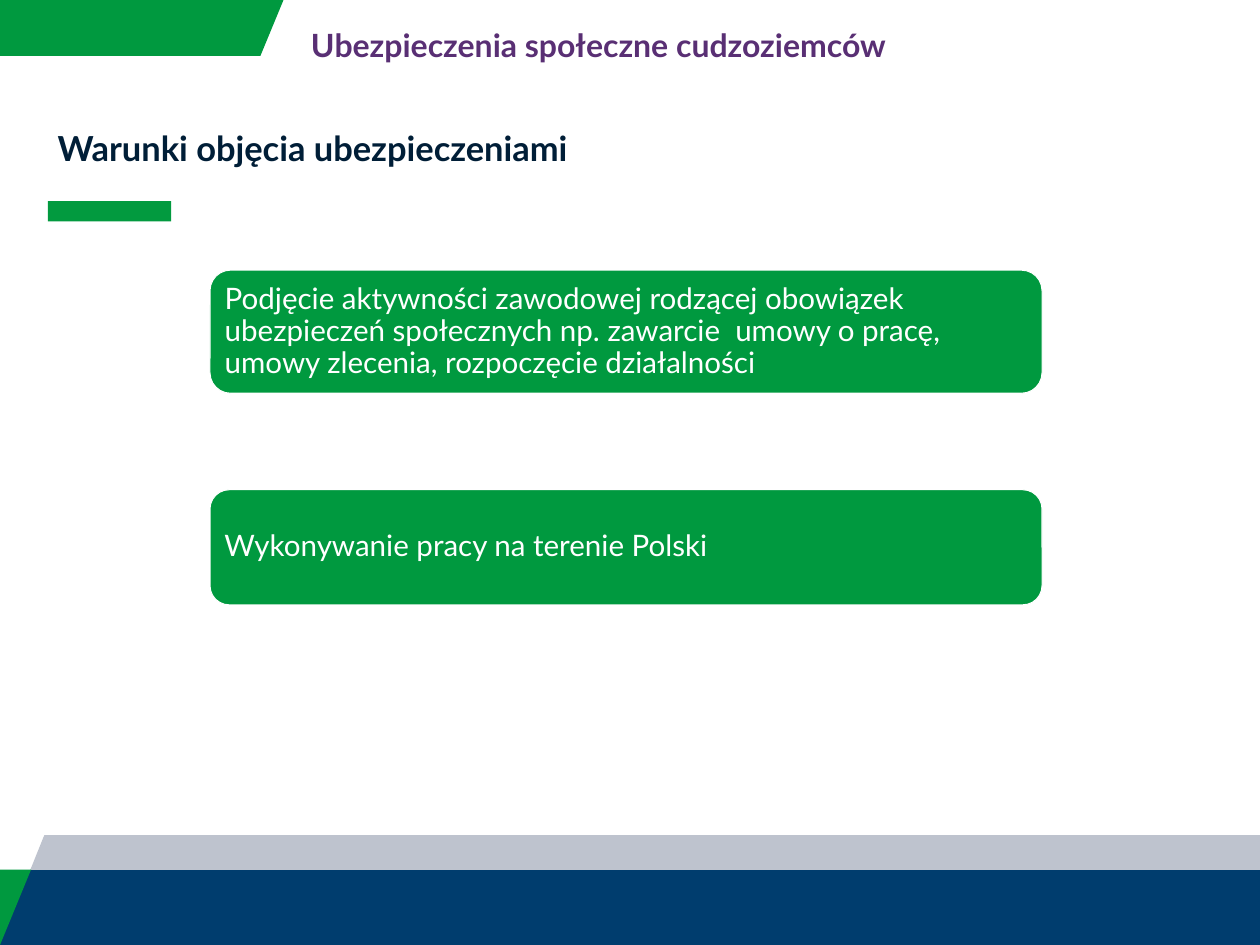
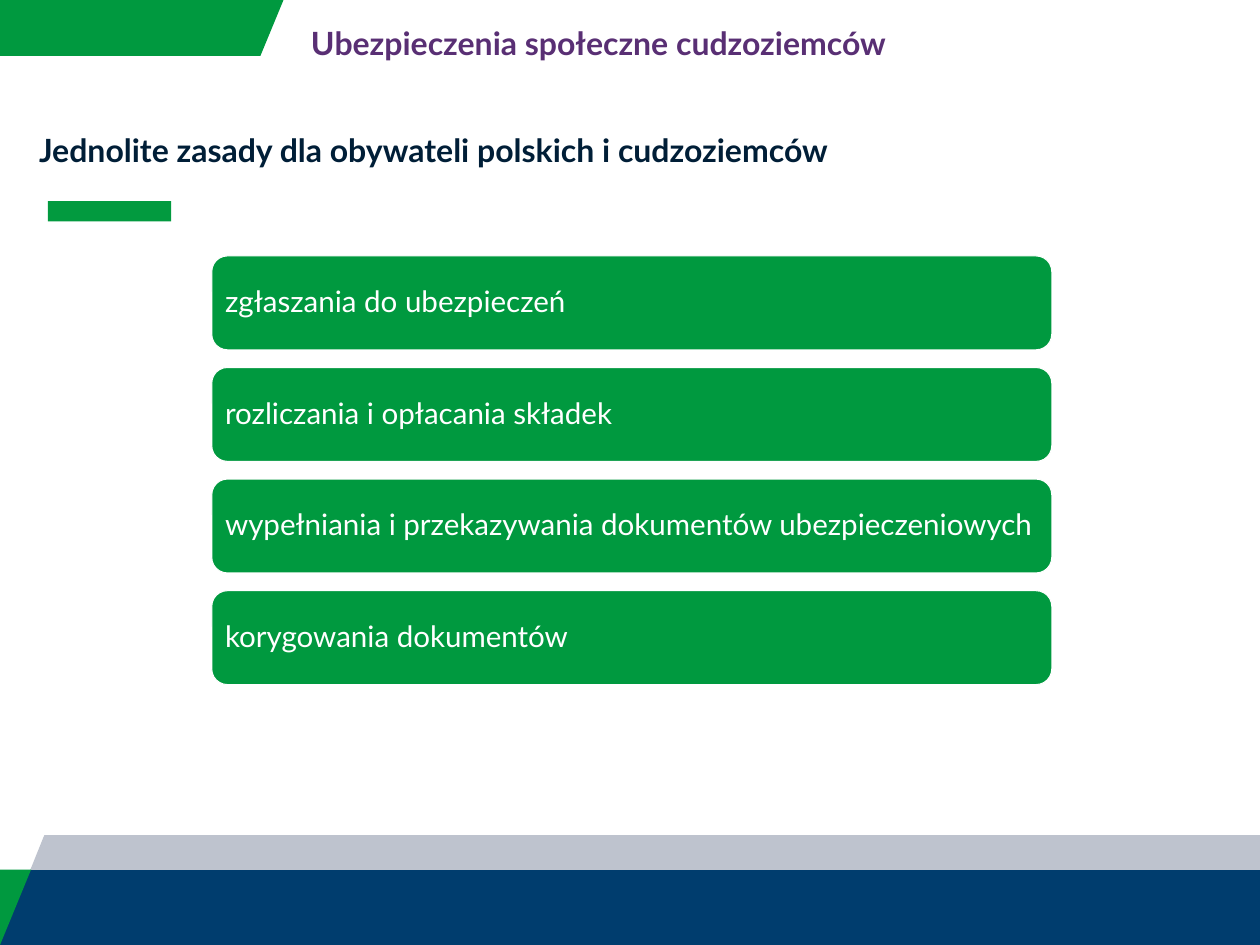
from dataclasses import dataclass

from lxml import etree
from pptx import Presentation
from pptx import util as u
from pptx.dml.color import RGBColor
from pptx.enum import shapes, text
from pptx.oxml.ns import qn

WIDTH, HEIGHT = 14.22, 10.67
FONT = "Lato"
GREEN, ACCENT, NAVY, GREY = "00993F", "029A3F", "003D6E", "BEC3CE"
PURPLE, INK, WHITE = "592F74", "001E37", "FFFFFF"
HEADER = "Ubezpieczenia społeczne cudzoziemców"

STRIP_TOP, FOOTER_TOP = 9.43, 9.82
BANDS = [
    (GREEN, [(0, 0), (3.2, 0), (2.94, 0.63), (0, 0.63)]),
    (GREY, [(0, HEIGHT), (0.5, STRIP_TOP), (WIDTH, STRIP_TOP), (WIDTH, HEIGHT)]),
    (NAVY, [(0, FOOTER_TOP), (WIDTH, FOOTER_TOP), (WIDTH, HEIGHT), (0, HEIGHT)]),
    (GREEN, [(0, FOOTER_TOP), (0.35, FOOTER_TOP), (0, HEIGHT)]),
]


@dataclass
class Box:
    left: float
    top: float
    width: float
    height: float

    def lengths(self) -> list[int]:
        return [u.Inches(value) for value in (self.left, self.top, self.width, self.height)]


@dataclass
class TextStyle:
    size: int
    color: str
    bold: bool
    line_spacing: float
    anchor: text.MSO_ANCHOR = text.MSO_ANCHOR.TOP


@dataclass
class Card:
    label: str
    box: Box


@dataclass
class SlidePlan:
    title: str
    title_box: Box
    title_style: TextStyle
    header_top: float
    cards: list[Card]


HEADER_STYLE = TextStyle(26, PURPLE, True, 1.5)
CARD_STYLE = TextStyle(24, WHITE, False, 0.9, text.MSO_ANCHOR.MIDDLE)

CONDITIONS = [
    Card("Podjęcie aktywności zawodowej rodzącej obowiązek ubezpieczeń społecznych "
         "np. zawarcie  umowy o pracę, umowy zlecenia, rozpoczęcie działalności",
         Box(2.37, 3.05, 9.39, 1.39)),
    Card("Wykonywanie pracy na terenie Polski", Box(2.37, 5.53, 9.39, 1.3)),
]
RULES = [
    "zgłaszania do ubezpieczeń",
    "rozliczania i opłacania składek",
    "wypełniania i przekazywania dokumentów ubezpieczeniowych",
    "korygowania dokumentów",
]
RULE_TOP, RULE_PITCH = 2.89, 1.26

PLANS = [
    SlidePlan("Warunki objęcia ubezpieczeniami", Box(0.55, 1.25, 12.76, 0.77),
              TextStyle(28, INK, True, 1.3), 0.02, CONDITIONS),
    SlidePlan("Jednolite zasady dla obywateli polskich i cudzoziemców",
              Box(0.34, 1.21, 11.16, 0.78), TextStyle(26, INK, True, 1.5), 0,
              [Card(rule, Box(2.39, RULE_TOP + row * RULE_PITCH, 9.48, 1.06))
               for row, rule in enumerate(RULES)]),
]


def rgb(color: str) -> RGBColor:
    return RGBColor.from_string(color)


def set_all(target, values: dict) -> None:
    for name, value in values.items():
        setattr(target, name, value)


def paint(shape, color: str) -> None:
    shape.shadow.inherit = False
    shape.fill.solid()
    shape.fill.fore_color.rgb = rgb(color)
    shape.line.fill.background()


def write(shape, content: str, style: TextStyle) -> None:
    frame = shape.text_frame
    frame.text = content
    set_all(frame, {"word_wrap": True, "auto_size": text.MSO_AUTO_SIZE.NONE,
                    "vertical_anchor": style.anchor})
    paragraph = frame.paragraphs[0]
    set_all(paragraph, {"alignment": text.PP_ALIGN.LEFT, "space_before": u.Pt(0),
                        "line_spacing": style.line_spacing})
    font = paragraph.runs[0].font
    set_all(font, {"name": FONT, "size": u.Pt(style.size), "bold": style.bold})
    font.color.rgb = rgb(style.color)


def fill_placeholder(shape, box: Box, content: str, style: TextStyle) -> None:
    """Move a placeholder, drop its bullet and write one line in it."""
    set_all(shape, dict(zip(("left", "top", "width", "height"), box.lengths())))
    write(shape, content, style)
    properties = shape.text_frame.paragraphs[0]._p.get_or_add_pPr()
    properties.set("marL", "0")
    properties.set("indent", "0")
    etree.SubElement(properties, qn("a:buNone"))


def add_band(slide, color: str, corners: list[tuple[float, float]]) -> None:
    start, *rest = [(u.Inches(x), u.Inches(y)) for x, y in corners]
    builder = slide.shapes.build_freeform(*start)
    builder.add_line_segments(rest, close=True)
    paint(builder.convert_to_shape(), color)


def add_card(slide, card: Card) -> None:
    shape = slide.shapes.add_shape(shapes.MSO_SHAPE.ROUNDED_RECTANGLE, *card.box.lengths())
    paint(shape, GREEN)
    shape.line.color.rgb = rgb(WHITE)
    shape.line.width = u.Pt(0.85)
    write(shape, card.label, CARD_STYLE)


def build_slide(presentation, plan: SlidePlan) -> None:
    slide = presentation.slides.add_slide(presentation.slide_layouts[1])
    for color, corners in BANDS:
        add_band(slide, color, corners)
    fill_placeholder(slide.placeholders[1], Box(3.41, plan.header_top, 8.74, 1.02),
                     HEADER, HEADER_STYLE)
    fill_placeholder(slide.shapes.title, plan.title_box, plan.title, plan.title_style)
    accent = slide.shapes.add_shape(shapes.MSO_SHAPE.RECTANGLE,
                                    *Box(0.54, 2.27, 1.39, 0.23).lengths())
    paint(accent, ACCENT)
    for card in plan.cards:
        add_card(slide, card)


def main() -> None:
    presentation = Presentation()
    set_all(presentation, {"slide_width": u.Inches(WIDTH), "slide_height": u.Inches(HEIGHT)})
    for plan in PLANS:
        build_slide(presentation, plan)
    presentation.save("out.pptx")


if __name__ == "__main__":
    main()
